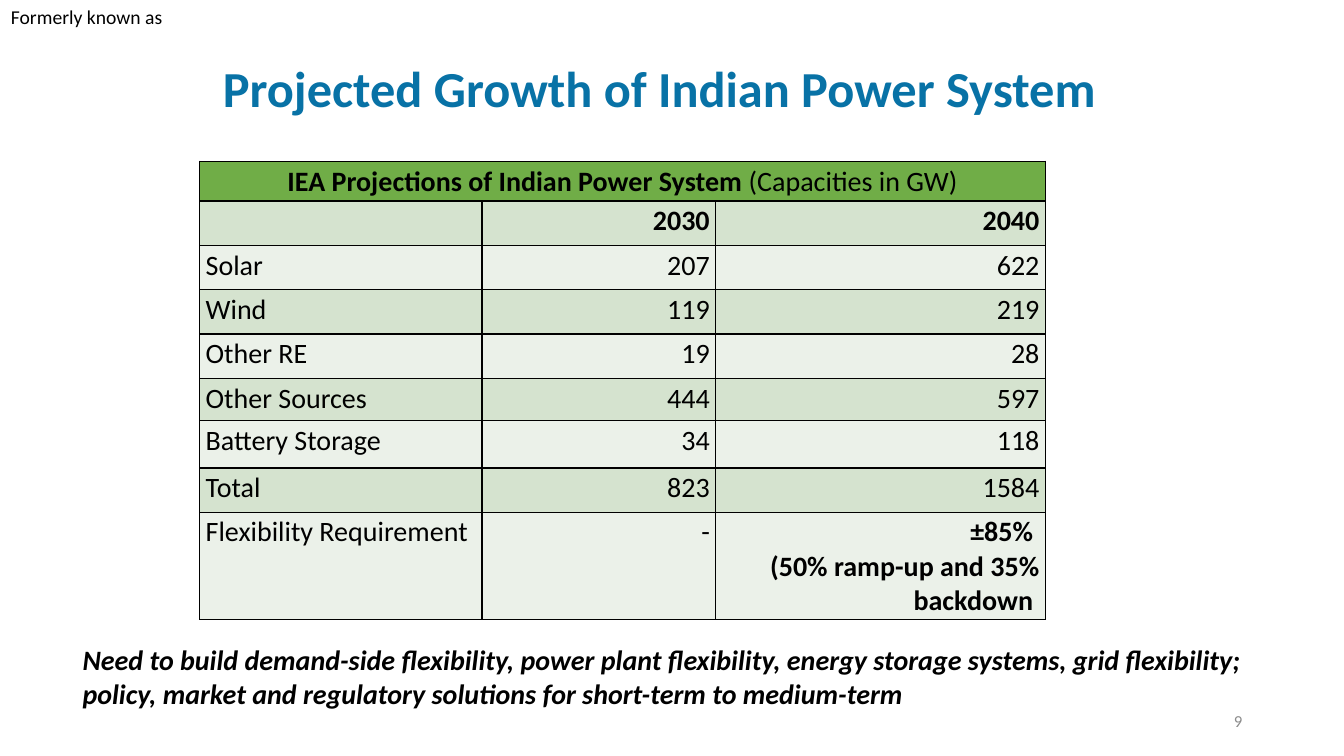
from lxml import etree
from pptx import Presentation
from pptx.dml.color import RGBColor
from pptx.enum import text
from pptx.oxml.ns import qn
from pptx.util import Inches, Pt

LEFT, CENTER, RIGHT = text.PP_ALIGN.LEFT, text.PP_ALIGN.CENTER, text.PP_ALIGN.RIGHT


def write(paragraph, words, size=20, color="000000", bold=False, italic=False, align=LEFT):
    """Add a formatted run to the paragraph."""
    paragraph.alignment = align
    run = paragraph.add_run()
    run.text = words
    font = run.font
    font.name, font.size, font.bold, font.italic = "Calibri", Pt(size), bold, italic
    font.color.rgb = RGBColor.from_string(color)


def style_cell(cell, fill):
    """Set margins, thin black borders and the fill."""
    cell.margin_left = cell.margin_right = Inches(0.06)
    cell.margin_top = cell.margin_bottom = Inches(0.03)
    properties = cell._tc.get_or_add_tcPr()
    for side in ("a:lnL", "a:lnR", "a:lnT", "a:lnB"):
        line = etree.SubElement(properties, qn(side), w=str(Pt(1)))
        solid = etree.SubElement(line, qn("a:solidFill"))
        etree.SubElement(solid, qn("a:srgbClr"), val="000000")
    cell.fill.solid()
    cell.fill.fore_color.rgb = RGBColor.from_string(fill)


presentation = Presentation()
presentation.slide_width, presentation.slide_height = Inches(13.33), Inches(7.5)
slide = presentation.slides.add_slide(presentation.slide_layouts[5])

# Title
title = slide.shapes.title
title.left, title.top, title.width, title.height = map(Inches, (2.21, 0.6, 8.84, 0.53))
heading = title.text_frame
heading.auto_size = text.MSO_AUTO_SIZE.NONE
heading.vertical_anchor = text.MSO_ANCHOR.MIDDLE
heading.margin_left = heading.margin_right = heading.margin_top = heading.margin_bottom = 0
write(heading.paragraphs[0], "Projected Growth of Indian Power System", size=36, color="0872A6", bold=True)

# Former name, page number and conclusion
conclusion = ("Need to build demand-side flexibility, power plant flexibility, energy storage systems, "
              "grid flexibility; policy, market and regulatory solutions for short-term to medium-term")
notes = [
    ((0.01, 0, 1.81, 0.34), "Formerly known as", text.MSO_ANCHOR.TOP, dict(size=14)),
    ((9.42, 6.95, 3, 0.4), "9", text.MSO_ANCHOR.MIDDLE, dict(size=12, color="8C8C8C", align=RIGHT)),
    ((0.72, 6.33, 11.88, 0.77), conclusion, text.MSO_ANCHOR.TOP, dict(bold=True, italic=True)),
]
for place, words, anchor, style in notes:
    frame = slide.shapes.add_textbox(*map(Inches, place)).text_frame
    frame.word_wrap = True
    frame.vertical_anchor = anchor
    write(frame.paragraphs[0], words, **style)

# Capacity table
capacities = [
    ("", "2030", "2040"),
    ("Solar", "207", "622"),
    ("Wind", "119", "219"),
    ("Other RE", "19", "28"),
    ("Other Sources", "444", "597"),
    ("Battery Storage", "34", "118"),
    ("Total", "823", "1584"),
    ("Flexibility Requirement", "-", "±85% \n(50% ramp-up and 35% backdown "),
]
row_heights = [0.39, 0.44, 0.44, 0.44, 0.44, 0.42, 0.47, 0.44, 1.04]
column_widths = [2.8, 2.32, 3.27]
table = slide.shapes.add_table(len(row_heights), len(column_widths), Inches(1.98), Inches(1.6),
                               Inches(sum(column_widths)), Inches(sum(row_heights))).table
for column, width in zip(table.columns, column_widths):
    column.width = Inches(width)
for row, height in zip(table.rows, row_heights):
    row.height = Inches(height)

for cell in table.rows[0].cells:
    style_cell(cell, "70AD47")
table.cell(0, 0).merge(table.cell(0, 2))
caption = table.cell(0, 0).text_frame.paragraphs[0]
write(caption, "IEA Projections of Indian Power System ", bold=True, align=CENTER)
write(caption, "(Capacities in GW)", align=CENTER)

for r, entries in enumerate(capacities, start=1):
    for c, entry in enumerate(entries):
        cell = table.cell(r, c)
        style_cell(cell, "D5E3CF" if r % 2 else "EBF1E9")
        emphasised = r == 1 or entry.startswith("±")
        for i, line in enumerate(entry.split("\n")):
            frame = cell.text_frame
            paragraph = frame.add_paragraph() if i else frame.paragraphs[0]
            if line:
                write(paragraph, line, bold=emphasised, align=RIGHT if c else LEFT)

presentation.save("out.pptx")
